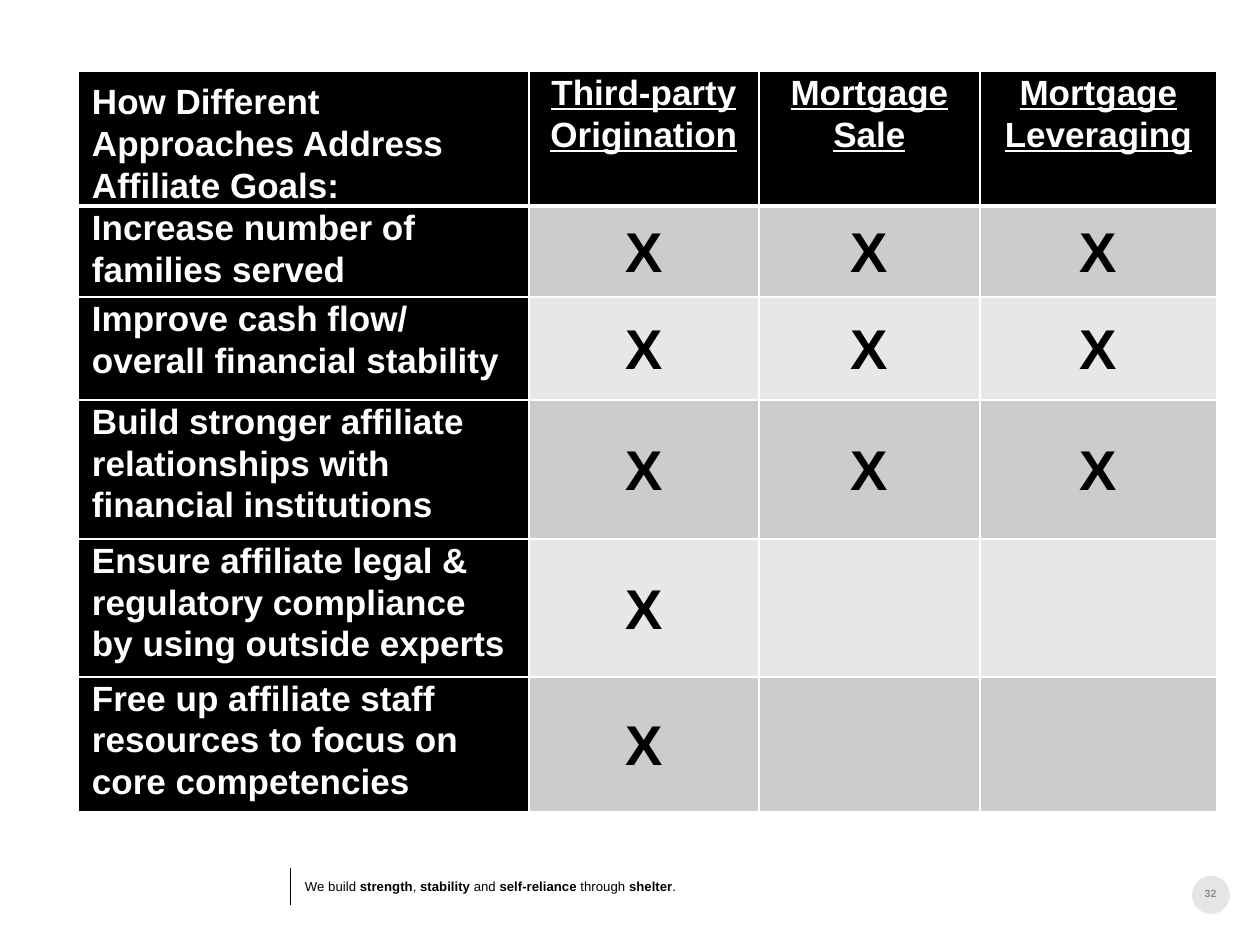
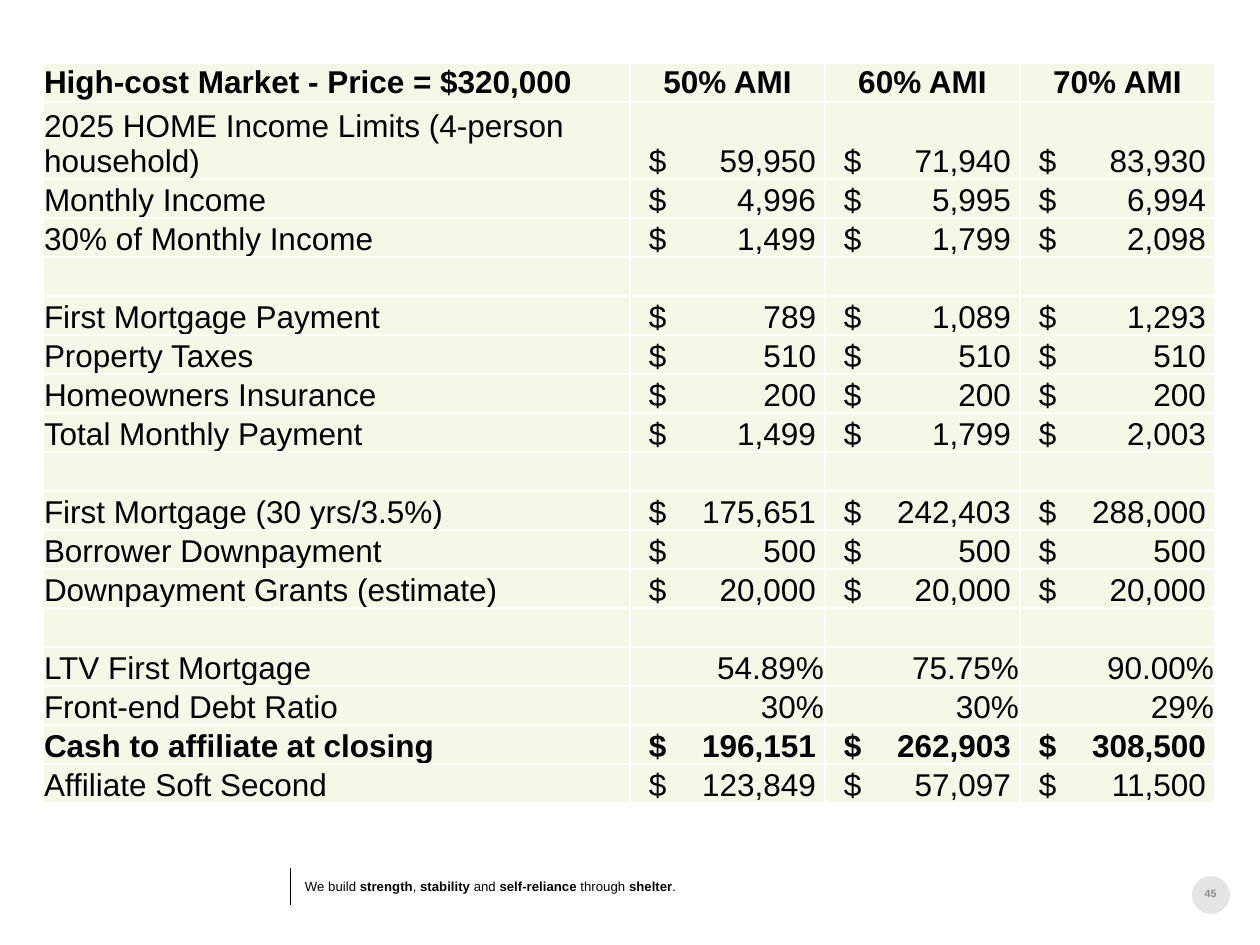
from pptx import Presentation
from pptx.dml.color import RGBColor
from pptx.enum.shapes import MSO_CONNECTOR as CONNECTOR, MSO_SHAPE as SHAPE
from pptx.enum.text import MSO_ANCHOR as ANCHOR, MSO_AUTO_SIZE as AUTO, PP_ALIGN as ALIGN
from pptx.oxml.ns import qn
from pptx.util import Emu, Pt
from lxml.etree import SubElement

EMU_PER_PX = 914400 / 126
FONT = "Arial"
BLACK, WHITE, GREY = "000000", "FFFFFF", "888B8D"
BANDS = ("CCCCCC", "E7E7E7")
CREAM = "F5F7E7"

MOTTO = [("We build ", False), ("strength", True), (", ", False), ("stability", True),
         (" and ", False), ("self-reliance", True), (" through ", False),
         ("shelter", True), (".", False)]

APPROACHES = ["How Different Approaches Address Affiliate Goals:",
              "Third-party Origination", "Mortgage Sale", "Mortgage Leveraging"]
GOALS = [
    ("Increase number of families served", 3),
    ("Improve cash flow/ overall financial stability", 3),
    ("Build stronger affiliate relationships with financial institutions", 3),
    ("Ensure affiliate legal & regulatory compliance by using outside experts", 1),
    ("Free up affiliate staff resources to focus on core competencies", 1),
]
GOAL_COLUMNS = [451, 230, 221, 237]
GOAL_ROWS = [134, 91, 103, 139, 138, 135]

MARKET_HEADER = ["High-cost Market - Price = $320,000", "50% AMI", "60% AMI", "70% AMI"]
CASH_LABEL = "Cash to affiliate at closing"
MARKET_ROWS = [
    ("2025 HOME Income Limits (4-person household)", 59950, 71940, 83930),
    ("Monthly Income", 4996, 5995, 6994),
    ("30% of Monthly Income", 1499, 1799, 2098),
    ("", "", "", ""),
    ("First Mortgage Payment", 789, 1089, 1293),
    ("Property Taxes", 510, 510, 510),
    ("Homeowners Insurance", 200, 200, 200),
    ("Total Monthly Payment", 1499, 1799, 2003),
    ("", "", "", ""),
    ("First Mortgage (30 yrs/3.5%)", 175651, 242403, 288000),
    ("Borrower Downpayment", 500, 500, 500),
    ("Downpayment Grants (estimate)", 20000, 20000, 20000),
    ("", "", "", ""),
    ("LTV First Mortgage", "54.89%", "75.75%", "90.00%"),
    ("Front-end Debt Ratio", "30%", "30%", "29%"),
    (CASH_LABEL, 196151, 262903, 308500),
    ("Affiliate Soft Second", 123849, 57097, 11500),
]
MARKET_COLUMNS = [587, 195, 195, 195]
MARKET_ROW, MARKET_TALL_ROW = 39, 77
DOLLAR_INDENT, AMOUNT_TAB = 19, 167


def px(length):
    """Turn pixels into EMU."""
    return Emu(round(length * EMU_PER_PX))


def rgb(code):
    """Turn a hex string into a colour."""
    return RGBColor.from_string(code)


def add_span(para, text, size, color, bold=False, underline=False):
    """Add one formatted run to a paragraph."""
    span = para.add_run()
    span.text = text
    font = span.font
    font.name, font.size, font.bold = FONT, Pt(size), bold
    font.underline = underline
    font.color.rgb = rgb(color)


def add_label(page, left, top, width, height):
    """Add an empty text box without margins and return its paragraph."""
    frame = page.shapes.add_textbox(px(left), px(top), px(width), px(height)).text_frame
    frame.margin_left = frame.margin_right = frame.margin_top = frame.margin_bottom = 0
    frame.word_wrap = True
    frame.auto_size = AUTO.SHAPE_TO_FIT_TEXT
    return frame.paragraphs[0]


def add_footer(page, number):
    """Draw the page number badge, the rule and the motto."""
    badge = page.shapes.add_shape(SHAPE.OVAL, px(1192), px(876), px(38), px(38))
    badge.shadow.inherit = False
    badge.line.fill.background()
    badge.fill.solid()
    badge.fill.fore_color.rgb = rgb(BLACK)
    tint = badge._element.spPr.find(qn("a:solidFill"))[0]
    SubElement(tint, qn("a:alpha"), val="10000")

    para = add_label(page, 1194, 887, 33, 14)
    para.alignment = ALIGN.CENTER
    add_span(para, str(number), 6, GREY, bold=True)

    rule = page.shapes.add_connector(CONNECTOR.STRAIGHT, px(290), px(868), px(290), px(905))
    rule.line.color.rgb = rgb(BLACK)
    rule.line.width = Pt(0.5)
    SubElement(rule._element.spPr, qn("a:effectLst"))

    para = add_label(page, 305, 881, 476, 13)
    para.line_spacing = 0.8
    for text, bold in MOTTO:
        add_span(para, text, 7.5, BLACK, bold)


def add_grid(page, left, top, columns, rows):
    """Add a plain table with the given column widths and row heights."""
    frame = page.shapes.add_table(len(rows), len(columns), px(left), px(top),
                                  px(sum(columns)), px(sum(rows)))
    table = frame.table
    table.first_row = table.horz_banding = False
    for column, width in zip(table.columns, columns):
        column.width = px(width)
    for row, height in zip(table.rows, rows):
        row.height = px(height)
    return table


def style_cell(cell, fill, anchor, side, edge=0, top_line=1, bottom_line=1):
    """Set borders, fill, margins and anchor, and return the paragraph."""
    properties = cell._tc.get_or_add_tcPr()
    for name, width in (("L", 1), ("R", 1), ("T", top_line), ("B", bottom_line)):
        border = SubElement(properties, qn(f"a:ln{name}"), w=str(Pt(width)))
        SubElement(SubElement(border, qn("a:solidFill")), qn("a:srgbClr"), val=WHITE)
    cell.fill.solid()
    cell.fill.fore_color.rgb = rgb(fill)
    cell.margin_left = cell.margin_right = px(side)
    cell.margin_top, cell.margin_bottom = px(edge), 0
    cell.vertical_anchor = anchor
    return cell.text_frame.paragraphs[0]


def fill_goal_cell(cell, text, fill, anchor, size=20, color=WHITE, centred=False,
                   underline=False, top_line=1, bottom_line=1):
    """Fill one cell of the goals table."""
    para = style_cell(cell, fill, anchor, 14, 0, top_line, bottom_line)
    para.line_spacing = 1.07
    para.space_after = Pt(8)
    para.alignment = ALIGN.CENTER if centred else ALIGN.LEFT
    if text:
        add_span(para, text, size, color, True, underline)


def add_goals_table(page):
    """Show which approach meets which affiliate goal."""
    table = add_grid(page, 78, 71, GOAL_COLUMNS, GOAL_ROWS)
    for col, text in enumerate(APPROACHES):
        fill_goal_cell(table.cell(0, col), text, BLACK, ANCHOR.TOP if col else ANCHOR.BOTTOM,
                       centred=col > 0, underline=col > 0, bottom_line=3)
    for row, (goal, marks) in enumerate(GOALS, 1):
        top_line = 3 if row == 1 else 1
        fill_goal_cell(table.cell(row, 0), goal, BLACK, ANCHOR.TOP, top_line=top_line)
        for col in range(1, len(APPROACHES)):
            fill_goal_cell(table.cell(row, col), "X" if col <= marks else "",
                           BANDS[(row - 1) % 2], ANCHOR.MIDDLE, 32, BLACK, True,
                           top_line=top_line)


def fill_market_cell(cell, value, align, bold=False, anchor=ANCHOR.BOTTOM):
    """Fill one cell of the market table, with amounts as dollars."""
    para = style_cell(cell, CREAM, anchor, 1, 1)
    if isinstance(value, int):
        cell.margin_left = px(DOLLAR_INDENT)
        tabs = SubElement(para._p.get_or_add_pPr(), qn("a:tabLst"))
        SubElement(tabs, qn("a:tab"), pos=str(px(AMOUNT_TAB)), algn="r")
        value, align = f"$\t{value:,}", ALIGN.LEFT
    para.alignment = align
    if value:
        add_span(para, value, 18, BLACK, bold)


def add_market_table(page):
    """Show the financing figures for each income level."""
    heights = [MARKET_ROW] * (len(MARKET_ROWS) + 1)
    heights[1] = MARKET_TALL_ROW
    table = add_grid(page, 43, 63, MARKET_COLUMNS, heights)
    for col, text in enumerate(MARKET_HEADER):
        fill_market_cell(table.cell(0, col), text, ALIGN.CENTER if col else ALIGN.LEFT,
                         True, ANCHOR.MIDDLE)
    for row, values in enumerate(MARKET_ROWS, 1):
        for col, value in enumerate(values):
            fill_market_cell(table.cell(row, col), value, ALIGN.RIGHT if col else ALIGN.LEFT,
                             values[0] == CASH_LABEL)


def main():
    """Build the deck."""
    deck = Presentation()
    deck.slide_width, deck.slide_height = px(1260), px(945)
    for number, add_content in ((32, add_goals_table), (45, add_market_table)):
        page = deck.slides.add_slide(deck.slide_layouts[6])
        add_footer(page, number)
        add_content(page)
    deck.save("out.pptx")


if __name__ == "__main__":
    main()
